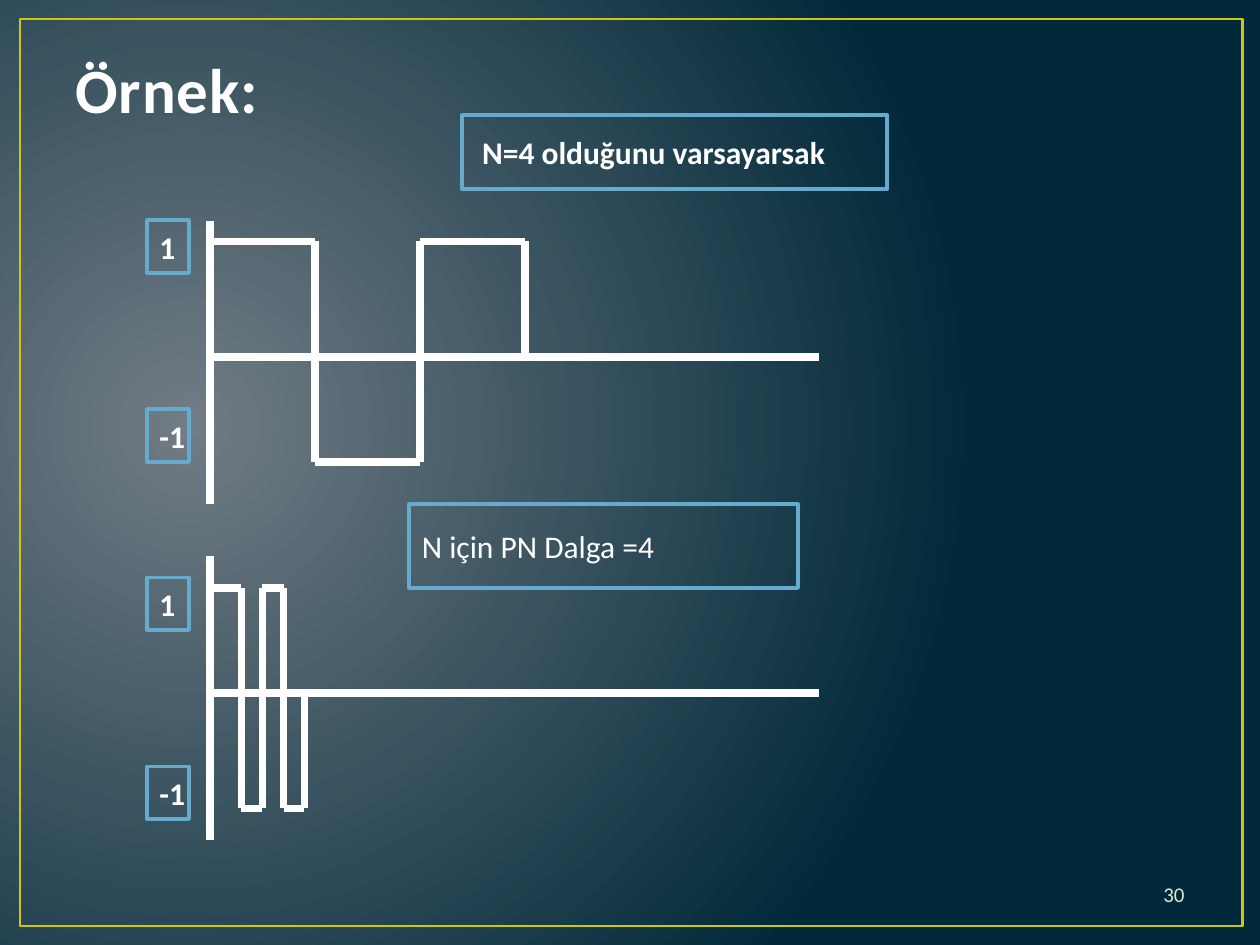
"""Build a slide with a data signal and its PN wave for N=4."""
from dataclasses import dataclass
from itertools import pairwise

from pptx import Presentation
from pptx.dml.color import RGBColor as RGB
from pptx.enum.shapes import MSO_CONNECTOR as CONN, MSO_SHAPE as SHAPE
from pptx.enum.text import MSO_ANCHOR as ANCHOR, PP_ALIGN as ALIGN
from pptx.oxml import parse_xml
from pptx.oxml.ns import nsdecls, qn
from pptx.util import Inches, Pt


@dataclass(frozen=True)
class Theme:
    font: str = "Calibri"
    glow: str = "717C84"
    night: str = "01293A"
    frame: str = "CFC60D"
    box: str = "66AACD"
    wave: str = "FFFFFF"
    title: str = "FEFEFE"
    number: str = "DFE6D0"
    title_size: int = 36
    body_size: int = 18
    number_size: int = 12
    frame_width: float = 1.5
    box_width: float = 2.25
    wave_width: float = 4.5


class Board:
    COLS, ROWS = 120, 90

    def __init__(self, prs, theme):
        self.theme = theme
        self.w, self.h = prs.slide_width, prs.slide_height
        self.s = prs.slides.add_slide(prs.slide_layouts[6])

    def x(self, cols):
        return round(self.w * cols / self.COLS)

    def y(self, rows):
        return round(self.h * rows / self.ROWS)

    def area(self, col, row, cols, rows):
        return self.x(col), self.y(row), self.x(cols), self.y(rows)

    def background(self):
        fill = self.s.background.fill
        fill.gradient()
        for stop, color in zip(fill.gradient_stops, (self.theme.glow, self.theme.night)):
            stop.color.rgb = RGB.from_string(color)
        grad = self.s.element.find(".//" + qn("a:gradFill"))
        grad.replace(grad.find(qn("a:lin")), parse_xml(
            f'<a:path {nsdecls("a")} path="circle">'
            '<a:fillToRect l="15000" t="50000" r="85000" b="60000"/></a:path>'))

    def rect(self, area, color, width):
        sp = self.s.shapes.add_shape(SHAPE.RECTANGLE, *self.area(*area))
        sp.shadow.inherit = False
        sp.fill.background()
        sp.line.color.rgb = RGB.from_string(color)
        sp.line.width = Pt(width)
        return sp

    def put_text(self, sp, text, size, color, bold=False, align=ALIGN.LEFT, anchor=ANCHOR.MIDDLE):
        tf = sp.text_frame
        tf.text = text
        tf.vertical_anchor = anchor
        p = tf.paragraphs[0]
        p.alignment = align
        r = p.runs[0]
        r.font.name, r.font.size, r.font.bold = self.theme.font, Pt(size), bold
        r.font.color.rgb = RGB.from_string(color)
        return r

    def label(self, text, area, bold=True, inset=0.1):
        sp = self.rect(area, self.theme.box, self.theme.box_width)
        self.put_text(sp, text, self.theme.body_size, self.theme.wave, bold)
        sp.text_frame.word_wrap = False
        sp.text_frame.margin_left = Inches(inset)

    def text(self, text, area, size, color, **style):
        sp = self.s.shapes.add_textbox(*self.area(*area))
        sp.text_frame.word_wrap = True
        return sp, self.put_text(sp, text, size, color, **style)

    def title(self, text):
        sp, r = self.text(text, (6, 3.6, 108, 15), self.theme.title_size,
                          self.theme.title, bold=True, anchor=ANCHOR.BOTTOM)
        sp.text_frame.margin_bottom = Inches(0.55)
        r._r.get_or_add_rPr().set("spc", "50")

    def number(self, text):
        self.text(text, (86, 82.8, 28, 4.8), self.theme.number_size,
                  self.theme.number, align=ALIGN.RIGHT)

    def trace(self, *points):
        for (x1, y1), (x2, y2) in pairwise(points):
            ln = self.s.shapes.add_connector(
                CONN.STRAIGHT, self.x(x1), self.y(y1), self.x(x2), self.y(y2))
            ln.line.color.rgb = RGB.from_string(self.theme.wave)
            ln.line.width = Pt(self.theme.wave_width)
            ln._element.spPr.append(parse_xml(f'<a:effectLst {nsdecls("a")}/>'))

    def plot(self, top, zero, high, low, edges, labels):
        left = edges[0]
        self.trace((left, top), (left, top + 27))
        self.trace((left, zero), (78, zero))
        points = []
        for i, (start, end) in enumerate(pairwise(edges)):
            level = low if i % 2 else high
            points += [(start, level), (end, level)]
        self.trace(*points, (edges[-1], zero))
        for text, row in zip(("1", "-1"), labels):
            self.label(text, (14, row, 4, 5))


def main():
    prs = Presentation()
    prs.slide_width, prs.slide_height = Inches(10), Inches(7.5)
    theme = Theme()
    board = Board(prs, theme)
    board.background()
    board.rect((1.92, 1.8, 116.4, 86.4), theme.frame, theme.frame_width)
    board.title("Örnek:")
    board.plot(21, 34, 23, 44, (20, 30, 40, 50), (21, 39))
    board.plot(53, 66, 56, 77, (20, 23, 25, 27, 29), (55, 73))
    board.label("N=4 olduğunu varsayarsak", (44, 11, 40.5, 7), inset=0.16)
    board.label("N için PN Dalga =4", (39, 48, 37, 8), bold=False)
    board.number("30")
    prs.save("out.pptx")


if __name__ == "__main__":
    main()
